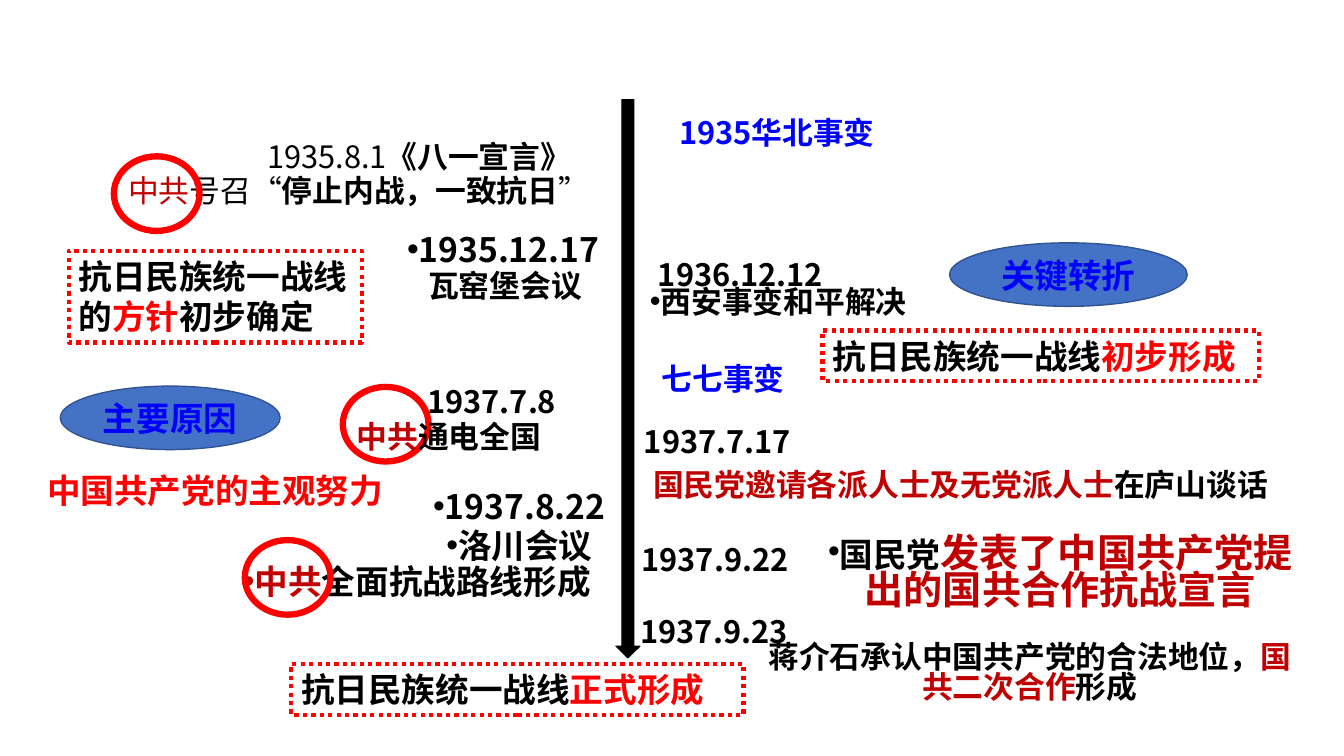
from dataclasses import dataclass

from lxml import etree
from pptx import Presentation
from pptx.dml.color import RGBColor
from pptx.enum import dml, shapes, text
from pptx.oxml import ns
from pptx.util import Cm, Pt

CJK, ARIAL = "Noto Sans CJK SC", "Arial"
BLACK, RED, DARK_RED, BLUE = "000000", "FF0000", "C00000", "0000FF"
LEFT, CENTER = text.PP_ALIGN.LEFT, text.PP_ALIGN.CENTER


@dataclass
class Run:
    words: str
    color: str = BLACK
    bold: bool = True
    size: float = 0  # 0 takes the size of the label


@dataclass
class Label:
    x: float
    y: float
    w: float
    h: float
    paragraphs: list[list[Run]]
    size: float = 22
    align: int = CENTER
    spacing: float = 1
    bullet: bool = False
    font: str = CJK
    wrap: bool = True


def rgb(value: str) -> RGBColor:
    return RGBColor.from_string(value)


def write(s, label: Label) -> None:
    tf = s.text_frame
    tf.word_wrap = label.wrap
    for i, runs in enumerate(label.paragraphs):
        p = tf.add_paragraph() if i else tf.paragraphs[0]
        if label.bullet:
            pPr = p._p.get_or_add_pPr()
            pPr.set("marL", "0")
            pPr.set("indent", "0")
            etree.SubElement(pPr, ns.qn("a:buFont")).set("typeface", ARIAL)
            etree.SubElement(pPr, ns.qn("a:buChar")).set("char", "•")
        p.alignment = label.align
        p.line_spacing = label.spacing
        if i:
            p.space_before = Pt(4.8)
        for run in runs:
            r = p.add_run()
            r.text = run.words
            r.font.size = Pt(run.size or label.size)
            r.font.bold = run.bold
            r.font.name = label.font
            r.font.color.rgb = rgb(run.color)
            etree.SubElement(r._r.get_or_add_rPr(), ns.qn("a:ea")).set("typeface", CJK)


def add_label(slide, label: Label) -> None:
    s = slide.shapes.add_textbox(Cm(label.x), Cm(label.y), Cm(label.w), Cm(label.h))
    write(s, label)
    s.text_frame.auto_size = text.MSO_AUTO_SIZE.SHAPE_TO_FIT_TEXT


def add_outline(slide, kind, x: float, y: float, w: float, h: float,
                line: str, width: float, fill: str = ""):
    s = slide.shapes.add_shape(kind, Cm(x), Cm(y), Cm(w), Cm(h))
    s.shadow.inherit = False
    if fill:
        s.fill.solid()
        s.fill.fore_color.rgb = rgb(fill)
    else:
        s.fill.background()
    s.line.color.rgb = rgb(line)
    s.line.width = Pt(width)
    return s


def add_badge(slide, label: Label) -> None:
    s = add_outline(slide, shapes.MSO_SHAPE.OVAL, label.x, label.y, label.w, label.h,
                    "325491", 1, "4472C4")
    write(s, label)
    s.text_frame.vertical_anchor = text.MSO_ANCHOR.MIDDLE


def add_stage(slide, label: Label) -> None:
    s = add_outline(slide, shapes.MSO_SHAPE.RECTANGLE, label.x, label.y, label.w, label.h, RED, 3)
    s.line.dash_style = dml.MSO_LINE.ROUND_DOT
    write(s, label)
    s.text_frame.vertical_anchor = text.MSO_ANCHOR.TOP
    s.text_frame.auto_size = text.MSO_AUTO_SIZE.SHAPE_TO_FIT_TEXT


EVENTS = [
    Label(5.74, 3.53, 9.65, 1.02, [[Run("1935.8.1", bold=False), Run("《八一宣言》")]], spacing=0.8),
    Label(2.54, 4.32, 13, 1.09,
          [[Run("中共", DARK_RED, False), Run("号召“", bold=False),
            Run("停止内战，一致抗日"), Run("”", bold=False)]], spacing=0.9),
    Label(16.33, 2.92, 6.5, 1.02, [[Run("1935华北事变", BLUE)]], spacing=0.8),
    Label(9.86, 5.64, 5.64, 1.27, [[Run("1935.12.17")]], size=24, bullet=True),
    Label(16.33, 6.32, 6.12, 1.19, [[Run("1936.12.12")]], align=LEFT),
    Label(15.98, 10.52, 5.08, 1.19, [[Run("1937.7.17")]], align=LEFT),
    Label(10.36, 12.32, 5.46, 2.11, [[Run("1937.8.22")], [Run("洛川会议")]],
          size=24, spacing=0.8, bullet=True),
    Label(5.82, 14.12, 9.37, 1.17, [[Run("中共", DARK_RED), Run("全面抗战路线形成")]],
          size=24, spacing=0.9, bullet=True),
    Label(15.72, 13.51, 4.6, 1.19, [[Run("1937.9.22")]]),
    Label(20.45, 13.41, 12.55, 2.16,
          [[Run("国民党"), Run("发表了中国共产党提出的国共合作抗战宣言", DARK_RED, size=28)]],
          size=24, spacing=0.8, bullet=True),
    Label(15.47, 15.32, 5.05, 1.19, [[Run("1937.9.23")]]),
    Label(18.75, 16.13, 14.4, 1.75,
          [[Run("蒋介石承认中国共产党的合法地位，"), Run("国共二次合作", DARK_RED), Run("形成")]],
          spacing=0.8),
    Label(0.94, 11.71, 10.57, 1.27, [[Run("中国共产党的主观努力", RED)]], size=24, align=LEFT),
]

BADGES = [
    Label(1.52, 9.73, 5.54, 1.6, [[Run("主要原因", BLUE)]], size=24),
    Label(23.93, 6.12, 5.99, 1.6, [[Run("关键转折", BLUE)]], size=24),
]

PARTY_RINGS = [(2.87, 3.94), (8.64, 9.75), (6.17, 13.61)]

EVENTS_ABOVE_RINGS = [
    Label(16.13, 6.99, 7.85, 1.19, [[Run("西安事变和平解决")]], align=LEFT, bullet=True),
    Label(10.54, 6.6, 4.39, 1.19, [[Run("瓦窑堡会议")]], align=LEFT, font=ARIAL, wrap=False),
    Label(16.21, 11.61, 16.1, 1.19,
          [[Run("国民党邀请各派人士及无党派人士", DARK_RED), Run("在庐山谈话")]],
          align=LEFT, font=ARIAL, wrap=False),
    Label(8.74, 10.39, 5.18, 1.19, [[Run("中共", DARK_RED), Run("通电全国")]],
          align=LEFT, font=ARIAL, wrap=False),
    Label(10.52, 9.53, 4.19, 1.19, [[Run("1937.7.8")]], align=LEFT),
    Label(16.13, 9.12, 4.19, 1.02, [[Run("七七事变", BLUE)]], spacing=0.8),
]

STAGES = [
    Label(1.73, 6.32, 7.39, 2.31,
          [[Run("抗日民族统一战线的"), Run("方针", RED), Run("初步确定")]],
          size=24, align=LEFT, font=ARIAL),
    Label(20.73, 8.33, 11, 1.27, [[Run("抗日民族统一战线"), Run("初步形成", RED)]],
          size=24, align=LEFT, font=ARIAL),
    Label(7.34, 16.74, 11.4, 1.27, [[Run("抗日民族统一战线"), Run("正式形成", RED)]],
          size=24, align=LEFT, font=ARIAL),
]


def main() -> None:
    prs = Presentation()
    prs.slide_width, prs.slide_height = Cm(33.87), Cm(19.05)
    slide = prs.slides.add_slide(prs.slide_layouts[6])

    # Time axis
    axis = add_outline(slide, shapes.MSO_SHAPE.DOWN_ARROW, 15.52, 2.51, 0.61, 14.07,
                       BLACK, 0.75, BLACK)
    axis.adjustments[0] = 0.5
    axis.adjustments[1] = 0.49

    # Events, badges and rings around the party's name
    for label in EVENTS:
        add_label(slide, label)
    for label in BADGES:
        add_badge(slide, label)
    for x, y in PARTY_RINGS:
        add_outline(slide, shapes.MSO_SHAPE.OVAL, x, y, 2.16, 1.88, RED, 4.5)
    for label in EVENTS_ABOVE_RINGS:
        add_label(slide, label)

    # Stages of the united front
    for label in STAGES:
        add_stage(slide, label)

    prs.save("out.pptx")


if __name__ == "__main__":
    main()
